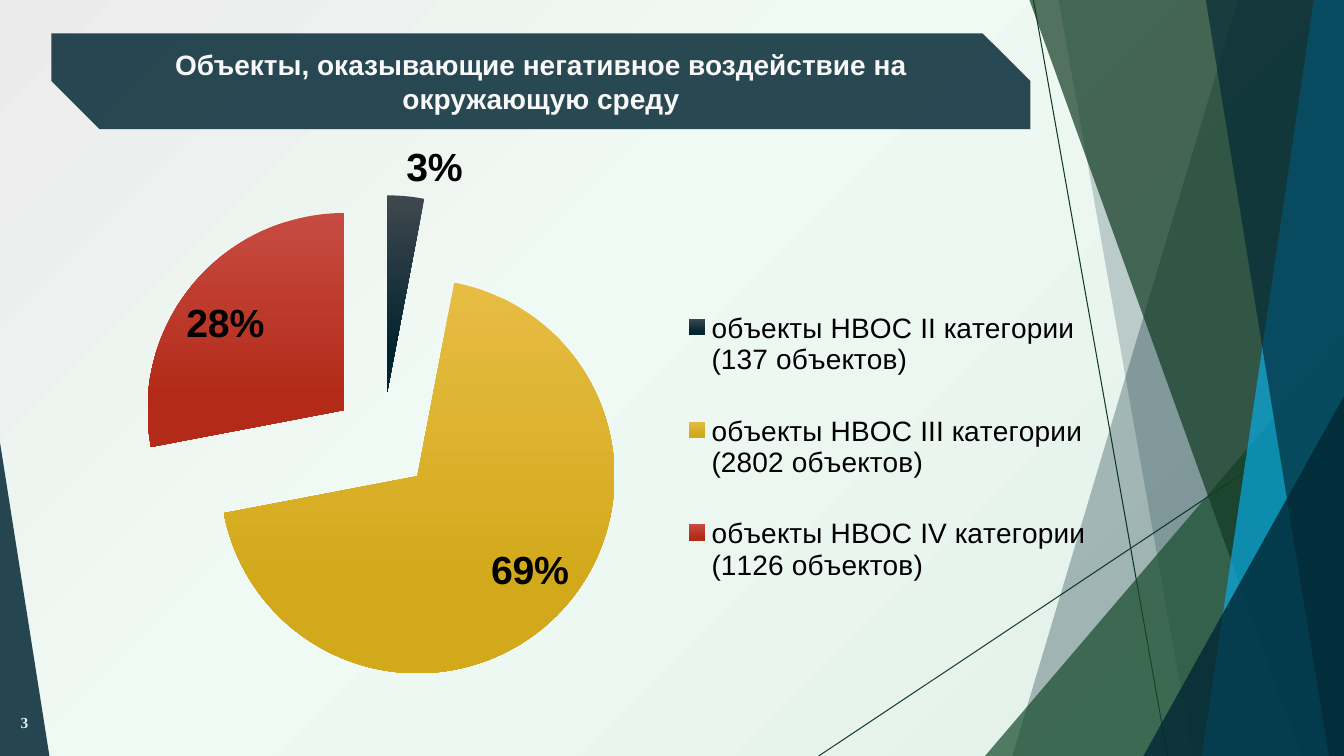
import lxml.etree
import pptx
import pptx.chart.data
import pptx.dml.color
import pptx.enum.chart
import pptx.enum.shapes
import pptx.enum.text
import pptx.oxml
import pptx.oxml.ns
import pptx.util

Inches = pptx.util.Inches
Pt = pptx.util.Pt
RGBColor = pptx.dml.color.RGBColor
qn = pptx.oxml.ns.qn

NAVY = RGBColor(0x02, 0x27, 0x34)
GREEN = RGBColor(0x11, 0x3A, 0x22)
MID_GREEN = RGBColor(0x17, 0x4D, 0x2D)
LINE_GREEN = RGBColor(0x14, 0x41, 0x26)
CYAN = RGBColor(0x09, 0xAB, 0xE4)
BLACK = RGBColor(0x00, 0x00, 0x00)
TITLE_WHITE = RGBColor(0xF8, 0xF8, 0xF8)
NUMBER_GREY = RGBColor(0xEB, 0xEB, 0xEB)
BACKGROUND_STOPS = (
    (0, RGBColor(0xE1, 0xEF, 0xE9)),
    (58, RGBColor(0xF0, 0xFA, 0xF4)),
    (100, RGBColor(0xEB, 0xEB, 0xEB)),
)
CATEGORIES = (
    ("объекты НВОС II категории (137 объектов)", 3,
     RGBColor(0x3F, 0x47, 0x4E), RGBColor(0x02, 0x24, 0x30)),
    ("объекты НВОС III категории (2802 объектов)", 69,
     RGBColor(0xE7, 0xBC, 0x43), RGBColor(0xD2, 0xA9, 0x1B)),
    ("объекты НВОС IV категории (1126 объектов)", 28,
     RGBColor(0xC7, 0x4B, 0x42), RGBColor(0xB3, 0x2B, 0x18)),
)


def paint_background(slide):
    """Fill the slide with a gradient radiating from the bottom right corner."""
    fill = slide.background.fill
    fill.gradient()
    gradient = slide.background._cSld.find(".//" + qn("a:gradFill"))
    stops = "".join(
        f'<a:gs pos="{position * 1000}"><a:srgbClr val="{color}"/></a:gs>'
        for position, color in BACKGROUND_STOPS
    )
    gradient.getparent().replace(gradient, pptx.oxml.parse_xml(
        f'<a:gradFill {pptx.oxml.ns.nsdecls("a")} rotWithShape="1"><a:gsLst>{stops}</a:gsLst>'
        '<a:path path="circle"><a:fillToRect l="100000" t="100000"/></a:path></a:gradFill>'
    ))


def paint_shape(shape, color, opacity):
    """Give a shape a translucent fill with no line and no shadow."""
    shape.shadow.inherit = False
    shape.line.fill.background()
    shape.fill.solid()
    shape.fill.fore_color.rgb = color
    color_element = shape._element.spPr.find(".//" + qn("a:srgbClr"))
    lxml.etree.SubElement(color_element, qn("a:alpha"), val=str(opacity * 1000))


def format_text(shape, text, alignment, font_name, size, color):
    """Write one bold paragraph into the vertical middle of a shape."""
    frame = shape.text_frame
    frame.word_wrap = True
    frame.vertical_anchor = pptx.enum.text.MSO_ANCHOR.MIDDLE
    frame.text = text
    paragraph = frame.paragraphs[0]
    paragraph.alignment = alignment
    font = paragraph.runs[0].font
    font.name, font.size, font.bold = font_name, Pt(size), True
    font.color.rgb = color


def add_thin_line(slide, begin, end, color):
    """Draw a thin line between two points."""
    line = slide.shapes.add_connector(
        pptx.enum.shapes.MSO_CONNECTOR.STRAIGHT,
        *(Inches(value) for value in (*begin, *end)))
    line.line.color.rgb = color
    line.line.width = Pt(0.75)
    lxml.etree.SubElement(line._element.spPr, qn("a:effectLst"))


def add_corner_triangle(slide, left, top, width, height, apex, color, opacity):
    """Draw a triangle whose apex sits at a share of its width."""
    triangle = slide.shapes.add_shape(
        pptx.enum.shapes.MSO_SHAPE.ISOSCELES_TRIANGLE,
        Inches(left), Inches(top), Inches(width), Inches(height))
    triangle.adjustments[0] = apex
    paint_shape(triangle, color, opacity)


def add_facet(slide, box, top_offset, bottom_offset, color, opacity):
    """Draw a band from a slanted left edge to the right edge of the box."""
    left, top, width, height = box
    right, bottom = left + width, top + height
    corners = [(left + top_offset, top), (right, top),
               (right, bottom), (left + bottom_offset, bottom)]
    points = [(Inches(x), Inches(y)) for x, y in corners]
    builder = slide.shapes.build_freeform(*points[0])
    builder.add_line_segments(points[1:], close=True)
    paint_shape(builder.convert_to_shape(), color, opacity)


def add_facets(slide, left, top, width, height):
    """Draw the layered facets and thin lines along the right side."""
    box = (left, top, width, height)
    right, bottom = left + width, top + height
    add_thin_line(slide, (left + 2.25, top), (left + 3.58, bottom), GREEN)
    add_thin_line(slide, (right, top + 4.03), (left + 0.12, bottom), LINE_GREEN)
    add_facet(slide, box, 4.28, 2.04, NAVY, 30)
    add_facet(slide, box, 2.5, 3.83, NAVY, 20)
    add_corner_triangle(slide, right - 3.56, bottom - 4.17, 3.56, 4.17, 1, MID_GREEN, 72)
    add_facet(slide, box, 2.21, 4.91, GREEN, 70)
    add_facet(slide, box, 5.03, 3.92, CYAN, 70)
    add_facet(slide, box, 3.96, 5.18, NAVY, 65)
    add_corner_triangle(slide, right - 1.99, bottom - 3.57, 1.99, 3.57, 1, NAVY, 80)


def add_title(slide, left, top, width, height):
    """Draw the title banner with two snipped corners."""
    banner = slide.shapes.add_shape(
        pptx.enum.shapes.MSO_SHAPE.SNIP_2_DIAG_RECTANGLE,
        Inches(left), Inches(top), Inches(width), Inches(height))
    banner.adjustments[0] = 0
    banner.adjustments[1] = 0.5
    paint_shape(banner, NAVY, 84)
    format_text(banner, "Объекты, оказывающие негативное воздействие на окружающую среду",
                pptx.enum.text.PP_ALIGN.CENTER, "Arial", 20, TITLE_WHITE)


def set_layout(parent, x, y, width, height, inner=False):
    """Place a chart part by shares of the chart area."""
    target = '<c:layoutTarget val="inner"/>' if inner else ""
    layout = pptx.oxml.parse_xml(
        f'<c:layout {pptx.oxml.ns.nsdecls("c")}><c:manualLayout>{target}'
        '<c:xMode val="edge"/><c:yMode val="edge"/>'
        f'<c:x val="{x}"/><c:y val="{y}"/><c:w val="{width}"/><c:h val="{height}"/>'
        '</c:manualLayout></c:layout>')
    for existing in parent.findall(qn("c:layout")):
        parent.remove(existing)
    parent.insert(0 if inner else 1, layout)


def add_pie(slide, left, top, width, height):
    """Add the exploded pie with percent labels and a legend."""
    data = pptx.chart.data.CategoryChartData()
    data.categories = [name for name, *_ in CATEGORIES]
    data.add_series("Series 1", [value for _, value, *_ in CATEGORIES])
    chart = slide.shapes.add_chart(
        pptx.enum.chart.XL_CHART_TYPE.PIE_EXPLODED,
        Inches(left), Inches(top), Inches(width), Inches(height), data).chart
    chart.has_title = False
    chart.font.name, chart.font.size = "Cabin", Pt(10)
    chart.font.color.rgb = BLACK
    plot = chart.plots[0]
    plot.vary_by_categories = True
    series = plot.series[0]
    for index, (_, _, start_color, end_color) in enumerate(CATEGORIES):
        fill = series.points[index].format.fill
        fill.gradient()
        fill.gradient_angle = 270
        for stop, color, position in zip(fill.gradient_stops, (start_color, end_color), (0, 0.78)):
            stop.color.rgb = color
            stop.position = position
    labels = series.data_labels
    labels.show_percentage, labels.show_value = True, False
    labels.position = pptx.enum.chart.XL_LABEL_POSITION.BEST_FIT
    labels.font.name, labels.font.size, labels.font.bold = "Arial", Pt(28), True
    labels.font.color.rgb = BLACK
    chart.has_legend = True
    legend = chart.legend
    legend.position = pptx.enum.chart.XL_LEGEND_POSITION.RIGHT
    legend.include_in_layout = False
    legend.font.name, legend.font.size = "Arial", Pt(20)
    set_layout(legend._element, 0.61, 0.22, 0.38, 0.58)
    set_layout(chart._chartSpace.find(".//" + qn("c:plotArea")), 0.06, 0.09, 0.57, 0.82, True)
    explosion = series._element.find(qn("c:explosion"))
    explosion.set("val", "25")


def add_slide_number(slide, left, top, width, height):
    """Write the slide number in the lower left corner."""
    box = slide.shapes.add_textbox(Inches(left), Inches(top), Inches(width), Inches(height))
    format_text(box, "3", pptx.enum.text.PP_ALIGN.RIGHT, "Times New Roman", 11, NUMBER_GREY)


def main():
    """Build the slide and save it."""
    presentation = pptx.Presentation()
    presentation.slide_width, presentation.slide_height = Inches(13.33), Inches(7.5)
    slide = presentation.slides.add_slide(presentation.slide_layouts[6])
    paint_background(slide)
    add_facets(slide, 8, 0, 5.33, 7.5)
    add_corner_triangle(slide, 0, 4.39, 0.49, 3.11, 0, NAVY, 85)
    add_title(slide, 0.51, 0.33, 9.71, 0.95)
    add_pie(slide, 0, 1.4, 11, 5.96)
    add_slide_number(slide, -0.37, 6.97, 0.75, 0.4)
    presentation.save("out.pptx")


if __name__ == "__main__":
    main()
